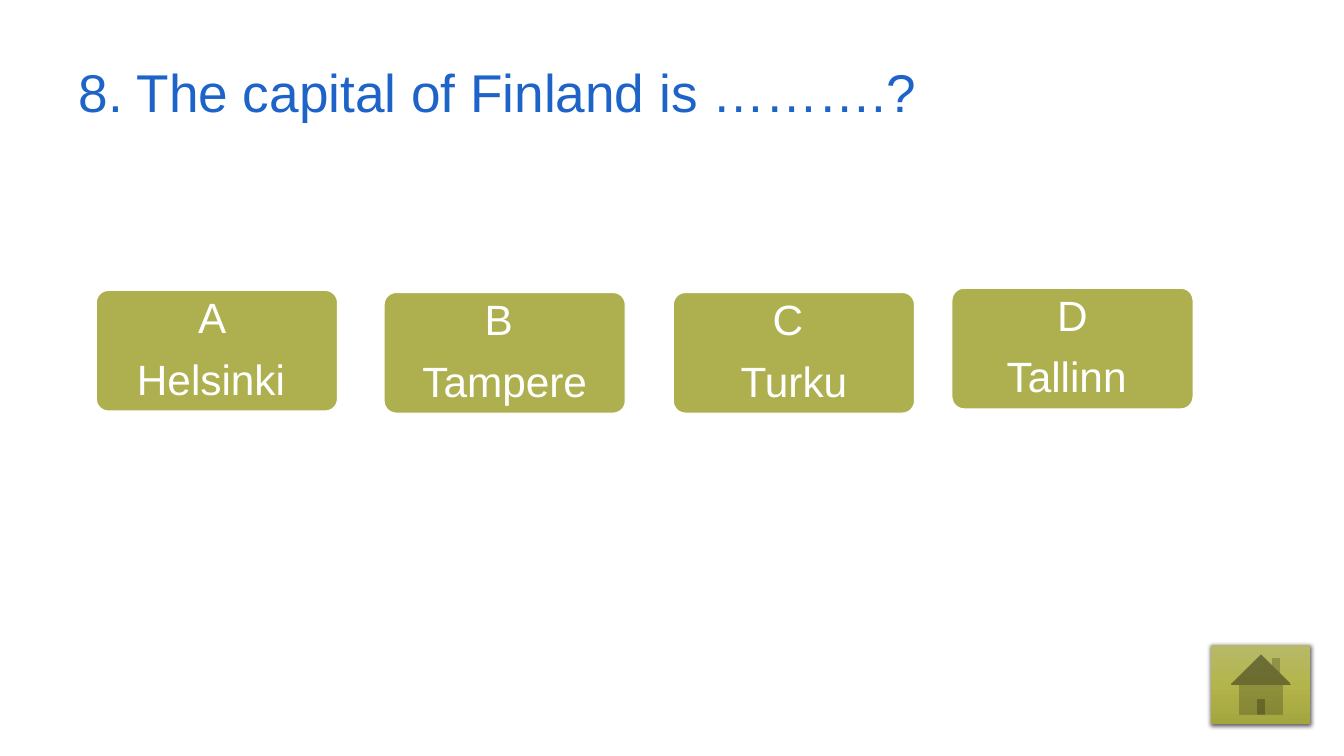
from lxml import etree
from pptx import Presentation
from pptx.dml.color import RGBColor
from pptx.enum.shapes import MSO_SHAPE
from pptx.enum.text import MSO_ANCHOR, PP_ALIGN
from pptx.oxml import parse_xml
from pptx.oxml.ns import nsdecls, qn
from pptx.util import Inches, Pt

ROUND_RECT = MSO_SHAPE.ROUNDED_RECTANGLE
HOME_BUTTON = MSO_SHAPE.ACTION_BUTTON_HOME
MIDDLE = MSO_ANCHOR.MIDDLE
CENTER, LEFT = PP_ALIGN.CENTER, PP_ALIGN.LEFT


def rgb(color):
    return RGBColor.from_string(color)


def write(tf, lines, size, color, align, after, inset):
    margins = {"margin_left": inset[0], "margin_right": inset[0],
               "margin_top": inset[1], "margin_bottom": inset[1]}
    for name, value in margins.items():
        setattr(tf, name, Inches(value))
    tf.word_wrap = True
    tf.vertical_anchor = MIDDLE
    for i, line in enumerate(lines):
        p = tf.paragraphs[0] if i == 0 else tf.add_paragraph()
        layout = {"alignment": align, "line_spacing": 0.9,
                  "space_before": Pt(0), "space_after": Pt(after)}
        for name, value in layout.items():
            setattr(p, name, value)
        r = p.add_run()
        r.text = line
        for name, value in {"name": "Arial", "size": Pt(size)}.items():
            setattr(r.font, name, value)
        r.font.color.rgb = rgb(color)


prs = Presentation()
prs.slide_width, prs.slide_height = Inches(18.96), Inches(10.67)
s = prs.slides.add_slide(prs.slide_layouts[6])

title = s.shapes.add_textbox(Inches(1.01), Inches(0.87), Inches(17.18), Inches(0.94))
write(title.text_frame, ["8. The capital of Finland is ……….?"], 54, "1E64C8", LEFT, 0, (0.1, 0.05))

home = s.shapes.add_shape(HOME_BUTTON, Inches(17.09), Inches(9.1), Inches(1.4), Inches(1.12))
home.line.fill.background()
home.shadow.inherit = False
props = home.fill._xPr
gradient = parse_xml(
    f'<a:gradFill {nsdecls("a")} rotWithShape="1"><a:gsLst/>'
    '<a:lin ang="5400000" scaled="0"/></a:gradFill>')
for pos, color in ((0, "B7B969"), (50, "B3B54B"), (100, "A3A53E")):
    stop = etree.SubElement(gradient[0], qn("a:gs"), pos=str(pos * 1000))
    etree.SubElement(stop, qn("a:srgbClr"), val=color)
props.insert(2, gradient)
props.find(qn("a:effectLst")).append(parse_xml(
    f'<a:outerShdw {nsdecls("a")} blurRad="{Pt(4.5)}" dist="{Pt(1.5)}" dir="5400000" '
    'algn="ctr" rotWithShape="0"><a:srgbClr val="000000"><a:alpha val="63000"/>'
    '</a:srgbClr></a:outerShdw>'))

answers = [
    (1.36, 4.1, "A ", "Helsinki "),
    (5.42, 4.13, "B ", "Tampere"),
    (9.5, 4.13, "C ", "Turku"),
    (13.43, 4.07, "D", "Tallinn "),
]
for x, y, letter, city in answers:
    sp = s.shapes.add_shape(ROUND_RECT, Inches(x), Inches(y), Inches(3.4), Inches(1.7))
    sp.adjustments[0] = 0.1
    sp.shadow.inherit = False
    sp.fill.solid()
    sp.fill.fore_color.rgb = rgb("AEB050")
    sp.line.color.rgb = rgb("FFFFFF")
    sp.line.width = Pt(1)
    write(sp.text_frame, [letter, city], 43, "FFFFFF", CENTER, 16, (0.14, 0.11))

prs.save("out.pptx")
